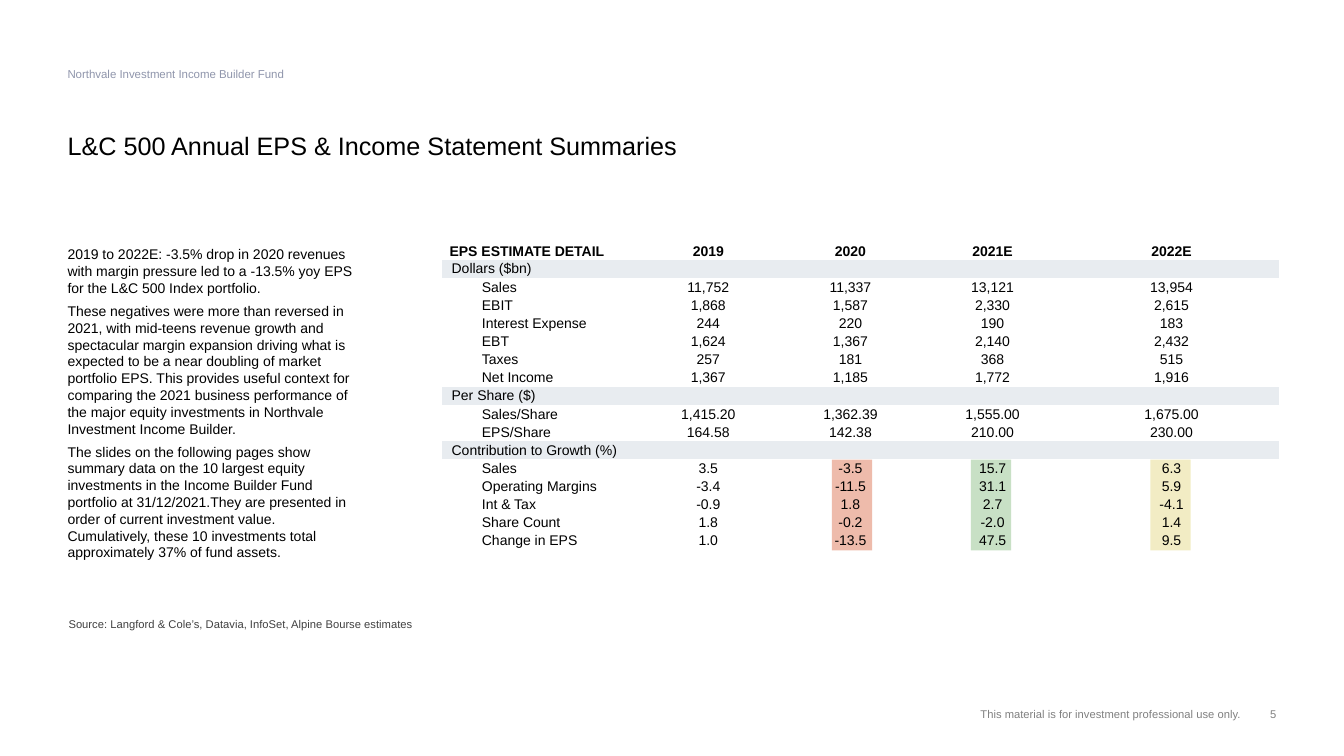
from dataclasses import dataclass

from lxml.etree import SubElement
from pptx import Presentation
from pptx.dml.color import RGBColor
from pptx.enum.shapes import MSO_SHAPE
from pptx.enum.text import MSO_ANCHOR, MSO_AUTO_SIZE, PP_ALIGN
from pptx.oxml.ns import qn
from pptx.util import Pt

PX = 9144  # one px is a hundredth of an inch
NO_TABLE_STYLE = "{2D5ABB26-0587-4C30-8999-92F81FD0307C}"


@dataclass(frozen=True)
class Theme:
    font: str = "Arial"
    ink: str = "000000"
    fund: str = "9096AC"
    source: str = "404040"
    footer: str = "808080"
    band: str = "E8ECF0"
    red: str = "CC3300"
    green: str = "59A251"
    yellow: str = "DAC84C"
    title_size: float = 18
    body_size: float = 10
    fund_size: float = 8.2
    small_size: float = 8


THEME = Theme()

COMMENTARY = [
    "2019 to 2022E: -3.5% drop in 2020 revenues with margin pressure led to "
    "a -13.5% yoy EPS for the L&C 500 Index portfolio.",
    "These negatives were more than reversed in 2021, with mid-teens revenue "
    "growth and spectacular margin expansion driving what is expected to be a "
    "near doubling of market portfolio EPS. This provides useful context for "
    "comparing the 2021 business performance of the major equity investments "
    "in Northvale Investment Income Builder.",
    "The slides on the following pages show summary data on the 10 largest "
    "equity investments in the Income Builder Fund portfolio at "
    "31/12/2021.They are presented in order of current investment value. "
    "Cumulatively, these 10 investments total approximately 37% of fund assets.",
]

# The first row is the header; a row with only a label opens a section
ESTIMATES = [
    ["EPS ESTIMATE DETAIL", "2019", "2020", "2021E", "2022E"],
    ["Dollars ($bn)"],
    ["Sales", "11,752", "11,337", "13,121", "13,954"],
    ["EBIT", "1,868", "1,587", "2,330", "2,615"],
    ["Interest Expense", "244", "220", "190", "183"],
    ["EBT", "1,624", "1,367", "2,140", "2,432"],
    ["Taxes", "257", "181", "368", "515"],
    ["Net Income", "1,367", "1,185", "1,772", "1,916"],
    ["Per Share ($)"],
    ["Sales/Share", "1,415.20", "1,362.39", "1,555.00", "1,675.00"],
    ["EPS/Share", "164.58", "142.38", "210.00", "230.00"],
    ["Contribution to Growth (%)"],
    ["Sales", "3.5", "-3.5", "15.7", "6.3"],
    ["Operating Margins", "-3.4", "-11.5", "31.1", "5.9"],
    ["Int & Tax", "-0.9", "1.8", "2.7", "-4.1"],
    ["Share Count", "1.8", "-0.2", "-2.0", "1.4"],
    ["Change in EPS", "1.0", "-13.5", "47.5", "9.5"],
]
COLUMN_WIDTHS = [194, 141, 141, 141, 214]
HEADER_HEIGHT, ROW_HEIGHT = 16, 18


def place(shape, left, top, width, height):
    shape.left, shape.top = left * PX, top * PX
    shape.width, shape.height = width * PX, height * PX


def write(frame, *paragraphs, size=THEME.body_size, color=THEME.ink, bold=False,
          align=PP_ALIGN.LEFT, leading=None, after=0):
    """Fill a text frame with evenly formatted paragraphs."""
    for index, text in enumerate(paragraphs):
        paragraph = frame.paragraphs[0] if index == 0 else frame.add_paragraph()
        properties = paragraph._p.get_or_add_pPr()
        properties.set("marL", "0")
        properties.set("indent", "0")
        paragraph.alignment = align
        paragraph.space_before = Pt(0)
        paragraph.space_after = Pt(after)
        if leading:
            paragraph.line_spacing = leading
        SubElement(properties, qn("a:buNone"))
        if not text:  # keeps an empty cell as low as its row
            paragraph._p.get_or_add_endParaRPr().set("sz", str(int(size * 100)))
            continue
        run = paragraph.add_run()
        run.text = text
        run.font.name, run.font.size, run.font.bold = THEME.font, Pt(size), bold
        run.font.color.rgb = RGBColor.from_string(color)


def fill_box(shape, bounds, *paragraphs, anchor=MSO_ANCHOR.TOP, **text_format):
    place(shape, *bounds)
    frame = shape.text_frame
    frame.word_wrap = True
    frame.auto_size = MSO_AUTO_SIZE.NONE
    frame.vertical_anchor = anchor
    frame.margin_left = frame.margin_right = 0
    frame.margin_top = frame.margin_bottom = 0
    write(frame, *paragraphs, **text_format)


def add_label(slide, bounds, text, **text_format):
    fill_box(slide.shapes.add_textbox(0, 0, 0, 0), bounds, text, **text_format)


def add_highlight(slide, left, color):
    """Tint one year's contribution figures."""
    highlight = slide.shapes.add_shape(MSO_SHAPE.RECTANGLE, 0, 0, 0, 0)
    place(highlight, left, 456, 40, 90)
    highlight.shadow.inherit = False
    highlight.line.fill.background()
    highlight.fill.solid()
    highlight.fill.fore_color.rgb = RGBColor.from_string(color)
    tint = highlight._element.spPr.find(qn("a:solidFill"))[0]
    SubElement(tint, qn("a:alpha")).set("val", "33000")


def fill_cell(cell, text, indent, anchor, banded, **text_format):
    cell.margin_left = indent * PX
    cell.margin_right = cell.margin_top = PX
    cell.margin_bottom = 0
    cell.vertical_anchor = anchor
    if banded:
        cell.fill.solid()
        cell.fill.fore_color.rgb = RGBColor.from_string(THEME.band)
    else:
        cell.fill.background()
    write(cell.text_frame, text, **text_format)


def add_estimates(slide, left, top):
    heights = [HEADER_HEIGHT] + [ROW_HEIGHT] * (len(ESTIMATES) - 1)
    table = slide.shapes.add_table(
        len(heights), len(COLUMN_WIDTHS), left * PX, top * PX,
        sum(COLUMN_WIDTHS) * PX, sum(heights) * PX).table
    table.first_row = table.horz_banding = False
    table._tbl.tblPr.find(qn("a:tableStyleId")).text = NO_TABLE_STYLE
    for column, width in zip(table.columns, COLUMN_WIDTHS):
        column.width = width * PX

    for r, (values, height) in enumerate(zip(ESTIMATES, heights)):
        table.rows[r].height = height * PX
        header, section = r == 0, len(values) == 1
        label_indent = 8 if header else 10 if section else 40
        for c in range(len(COLUMN_WIDTHS)):
            fill_cell(
                table.cell(r, c), values[c] if c < len(values) else "",
                indent=1 if c else label_indent,
                anchor=MSO_ANCHOR.BOTTOM if header else MSO_ANCHOR.MIDDLE,
                banded=section, bold=header,
                align=PP_ALIGN.CENTER if c else PP_ALIGN.LEFT)


def main():
    deck = Presentation()
    deck.slide_width, deck.slide_height = 1333 * PX, 750 * PX
    slide = deck.slides.add_slide(deck.slide_layouts[1])

    # Fund name, title and commentary
    add_label(slide, (67, 67, 400, 14), "Northvale Investment Income Builder Fund",
              size=THEME.fund_size, color=THEME.fund)
    fill_box(slide.shapes.title, (67, 133, 934, 27),
             "L&C 500 Annual EPS & Income Statement Summaries",
             anchor=MSO_ANCHOR.BOTTOM, size=THEME.title_size, leading=0.9)
    fill_box(slide.placeholders[1], (67, 244, 287, 277), *COMMENTARY,
             leading=Pt(12), after=4.5)

    # Year highlights lie behind the unfilled table cells
    for left, color in ((825, THEME.red), (963, THEME.green), (1141, THEME.yellow)):
        add_highlight(slide, left, color)
    add_estimates(slide, 438, 241)

    # Source and footer
    add_label(slide, (68, 612, 1156, 13),
              "Source: Langford & Cole’s, Datavia, InfoSet, Alpine Bourse estimates",
              size=THEME.small_size, color=THEME.source)
    for bounds, text in (
            ((667, 695, 564, 20), "This material is for investment professional use only."),
            ((1230, 695, 36, 20), "5")):
        add_label(slide, bounds, text, anchor=MSO_ANCHOR.BOTTOM,
                  align=PP_ALIGN.RIGHT, size=THEME.small_size, color=THEME.footer)

    deck.save("out.pptx")


if __name__ == "__main__":
    main()
